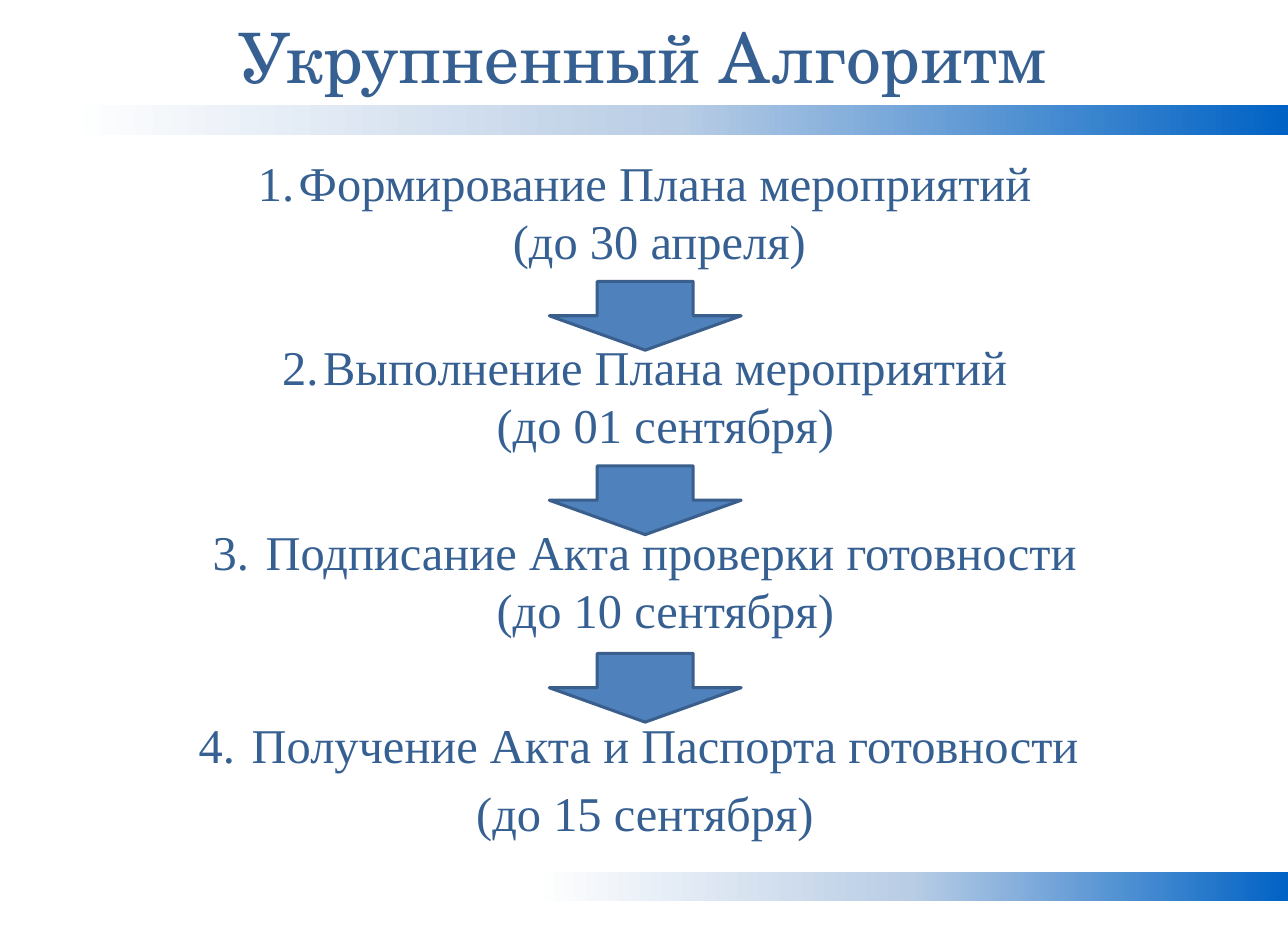
from pptx import Presentation
from pptx.dml.color import RGBColor
from pptx.enum.shapes import MSO_SHAPE as Shape
from pptx.enum.text import MSO_ANCHOR as Anchor, PP_ALIGN as Align
from pptx.oxml import parse_xml
from pptx.oxml.ns import nsdecls
from pptx.util import Emu, Pt

SCALE = 1587.5  # EMU per px, 576 px to the inch
PAGE_WIDTH, PAGE_HEIGHT = 6804, 4990
COLORS = {"text": "366092", "arrow": "4F81BD", "edge": "3A5F8C",
          "deep": "0062C4", "pale": "B9CDE5", "white": "FFFFFF"}
STEPS = [  # text, space before in points
    ("Формирование Плана мероприятий\v(до 30 апреля) ", 0),
    ("Выполнение Плана мероприятий\v(до 01 сентября)", 45),
    (" Подписание Акта проверки готовности\v(до 10 сентября)", 45),
    (" Получение Акта и Паспорта готовности ", 51),
]


def px(value):
    return Emu(round(value * SCALE))


def color(name):
    return RGBColor.from_string(COLORS[name])


def add_box(page, box, anchor=Anchor.TOP):
    frame = page.shapes.add_textbox(*map(px, box)).text_frame
    frame.word_wrap = True
    frame.vertical_anchor = anchor
    frame.margin_left = frame.margin_right = px(68)
    frame.margin_top = frame.margin_bottom = px(34)
    return frame


def write(para, text, size, font, before=0, numbered=False):
    para.alignment = Align.CENTER
    para.space_before = Pt(before)
    if numbered:
        props = para._p.get_or_add_pPr()
        props.set("marL", str(px(216)))
        props.set("indent", str(px(-216)))
        props.append(parse_xml(
            f'<a:buAutoNum {nsdecls("a")} type="arabicPeriod"/>'))
    para.text = text
    for span in para.runs:
        span.font.size = Pt(size)
        span.font.name = font
        span.font.color.rgb = color("text")


def add_band(page, box):
    band = page.shapes.add_shape(Shape.RECTANGLE, *map(px, box))
    band.shadow.inherit = False
    band.line.fill.background()
    band.fill.gradient()
    band.fill.gradient_angle = 180
    stops = band.fill._fill._gradFill.gsLst
    for stop in list(stops):
        stops.remove(stop)
    for place, name in ((0, "deep"), (50, "pale"), (100, "white")):
        stops.append(parse_xml(
            f'<a:gs {nsdecls("a")} pos="{place * 1000}">'
            f'<a:srgbClr val="{COLORS[name]}"/></a:gs>'))


def add_title(page, box):
    frame = add_box(page, box, Anchor.MIDDLE)
    write(frame.paragraphs[0], "Укрупненный Алгоритм", 45.9, "TeX Gyre Schola")


def add_steps(page, box):
    left, top, width, height = box
    frame = add_box(page, box)
    style = {"size": 32, "font": "Times New Roman"}
    para = frame.paragraphs[0]
    for text, before in STEPS:
        write(para, text, before=before, numbered=True, **style)
        para = frame.add_paragraph()
    write(para, "(до 15 сентября)", before=6.4, **style)

    # Arrows between the steps
    for offset in (714, 1688, 2678):
        arrow = page.shapes.add_shape(
            Shape.DOWN_ARROW, px(left + (width - 1012) / 2), px(top + offset),
            px(1014), px(363))
        arrow.shadow.inherit = False
        arrow.fill.solid()
        arrow.fill.fore_color.rgb = color("arrow")
        arrow.line.color.rgb = color("edge")
        arrow.line.width = Pt(2)


def main():
    deck = Presentation()
    deck.slide_width, deck.slide_height = px(PAGE_WIDTH), px(PAGE_HEIGHT)
    page = deck.slides.add_slide(deck.slide_layouts[6])
    # Bands under the title and at the foot
    for left, top in ((346, 556), (2811, 4604)):
        add_band(page, (left, top, PAGE_WIDTH - left, 156))
    add_title(page, (219, 138, 6359, 317))
    add_steps(page, (346, 772, 6123, 3830))
    deck.save("out.pptx")


if __name__ == "__main__":
    main()
